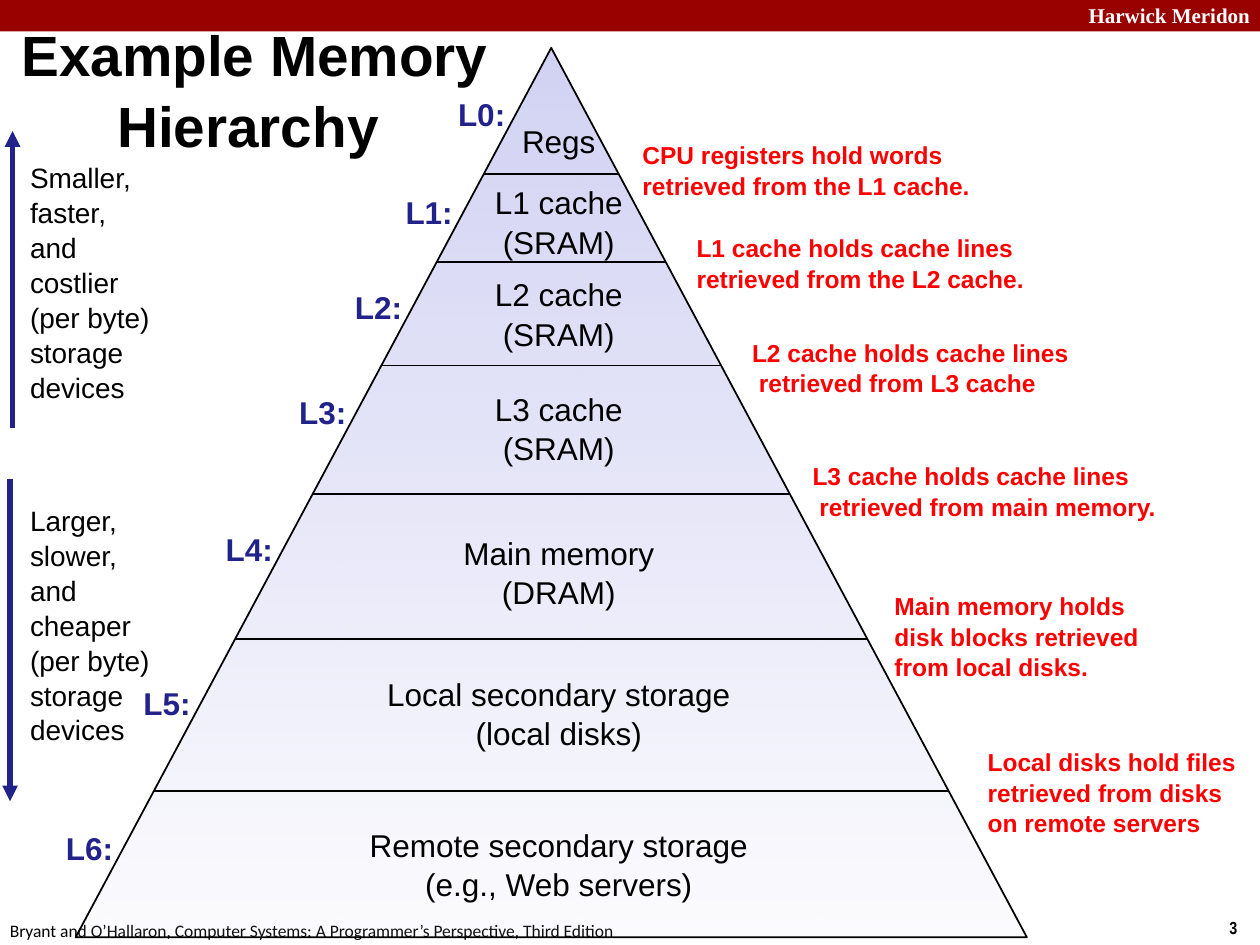
from lxml.etree import SubElement
from pptx import Presentation
from pptx.dml.color import RGBColor
from pptx.enum.shapes import MSO_CONNECTOR as CONN, MSO_SHAPE as SHAPE
from pptx.enum.text import MSO_ANCHOR as ANCHOR, MSO_AUTO_SIZE as AUTO, PP_ALIGN as ALIGN
from pptx.oxml.ns import qn
from pptx.util import Pt

PX = 9144  # EMU per px, 100 px to the inch
BLACK, WHITE, RED, NAVY = "000000", "FFFFFF", "FF0000", "22228B"
BANNER, LAVENDER = "990000", "D2D2F4"
LEADING = 1.04

# name lines, top of name, middle of label, bottom of level
LEVELS = [
    (["Regs"], 91, 90, 138),
    (["L1 cache", "(SRAM)"], 140, 168, 208),
    (["L2 cache", "(SRAM)"], 213, 243, 290),
    (["L3 cache", "(SRAM)"], 304, 326, 392),
    (["Main memory", "(DRAM)"], 418, 435, 507),
    (["Local secondary storage", "(local disks)"], 530, 557, 628),
    (["Remote secondary storage", "(e.g., Web servers)"], 650, 672, 744),
]
NOTES = [
    ((500, 106, 319, 57), ["CPU registers hold words retrieved from the L1 cache."]),
    ((543, 180, 310, 57), ["L1 cache holds cache lines retrieved from the L2 cache."]),
    ((587, 263, 288, 57), ["L2 cache holds cache lines", " retrieved from L3 cache"]),
    ((635, 361, 315, 57), ["L3 cache holds cache lines", " retrieved from main memory."]),
    ((700, 464, 239, 81), ["Main memory holds disk blocks retrieved from local disks."]),
    ((774, 588, 226, 81), ["Local disks hold files retrieved from disks", "on remote servers"]),
]
SMALLER = ["Smaller,", "faster,", "and", "costlier", "(per byte)", "storage", "devices"]
LARGER = ["Larger,", "slower,", "and", "cheaper", "(per byte)", "storage", "devices"]


def rgb(value):
    return RGBColor.from_string(value)


def emu(*lengths):
    return [round(n * PX) for n in lengths]


def write(tf, lines, size, color=BLACK, bold=False, font="Arial", align=ALIGN.LEFT):
    """Fill a text frame with one paragraph for each line."""
    for i, line in enumerate(lines):
        p = tf.add_paragraph() if i else tf.paragraphs[0]
        p.alignment = align
        p.space_before = Pt(0)
        if font == "Arial":
            p.line_spacing = LEADING
        r = p.add_run()
        r.text = line
        r.font.name, r.font.size, r.font.bold = font, Pt(size), bold
        r.font.color.rgb = rgb(color)


def add_text(slide, box, lines, size, wrap=True, anchor=ANCHOR.MIDDLE, **style):
    tf = slide.shapes.add_textbox(*emu(*box)).text_frame
    tf.word_wrap = wrap
    tf.vertical_anchor = anchor
    write(tf, lines, size, **style)


def add_line(slide, start, end, color=BLACK, width=1, arrow=False):
    line = slide.shapes.add_connector(CONN.STRAIGHT, *emu(*start, *end))
    line.line.color.rgb = rgb(color)
    line.line.width = Pt(width)
    if arrow:
        SubElement(line.line._get_or_add_ln(), qn("a:tailEnd"), type="triangle")
    SubElement(line._element.spPr, qn("a:effectLst"))


def add_frame(slide, width):
    """Banner, page number and source line."""
    banner = slide.shapes.add_shape(SHAPE.RECTANGLE, *emu(0, 0, width, 25))
    banner.shadow.inherit = False
    banner.fill.solid()
    banner.fill.fore_color.rgb = rgb(BANNER)
    banner.line.fill.background()
    add_text(slide, (width - 200, -3, 202, 30), ["Harwick Meridon"], 12, color=WHITE,
             bold=True, font="Times New Roman", align=ALIGN.RIGHT)
    add_text(slide, (width - 34, 723, 34, 27), ["3"], 10, wrap=False,
             bold=True, font="Arial Narrow", anchor=ANCHOR.TOP)
    add_text(slide, (-2, 725, 508, 27),
             ["Bryant and O’Hallaron, Computer Systems: A Programmer’s Perspective, Third Edition"],
             10, wrap=False, font="Calibri", anchor=ANCHOR.TOP)


def add_title(slide, box):
    title = slide.shapes.title
    title.left, title.top, title.width, title.height = emu(*box)
    tf = title.text_frame
    tf.auto_size = AUTO.NONE
    tf.vertical_anchor = ANCHOR.MIDDLE
    write(tf, ["Example Memory", "Hierarchy"], 32.4, bold=True)
    tf.paragraphs[1]._p.get_or_add_pPr().set("marL", str(76 * PX))


def add_pyramid(slide, box):
    left, top, width, height = box
    middle = left + width / 2
    sp = slide.shapes.add_shape(SHAPE.ISOSCELES_TRIANGLE, *emu(*box))
    sp.shadow.inherit = False
    sp.fill.gradient()
    sp.fill.gradient_angle = 90
    for stop in sp.fill.gradient_stops:
        stop.color.rgb = rgb(LAVENDER)
    base_color = next(sp._element.spPr.iter(qn("a:srgbClr")))
    SubElement(base_color, qn("a:alpha"), val="7000")
    sp.line.color.rgb = rgb(BLACK)
    sp.line.width = Pt(1)

    def half_width(y):
        return (y - top) / height * width / 2

    for i, (name, name_y, label_y, bottom) in enumerate(LEVELS):
        name_height = 9 + 31 * len(name)
        add_text(slide, (middle - 194, name_y, 400, name_height), name, 18, align=ALIGN.CENTER)
        label_x = middle - half_width(label_y) - 56
        add_text(slide, (label_x, label_y - 20, 58, 40), [f"L{i}:"], 18,
                 wrap=False, color=NAVY, bold=True)
        if i < len(LEVELS) - 1:
            half = half_width(bottom)
            add_line(slide, (middle - half, bottom), (middle + half, bottom))


def add_trend(slide, box, lines, arrow_x, start_y, end_y):
    """Side remark with the arrow along it."""
    add_text(slide, box, lines, 16, wrap=False)
    add_line(slide, (arrow_x, start_y), (arrow_x, end_y), NAVY, 3, arrow=True)


def main():
    prs = Presentation()
    prs.slide_width, prs.slide_height = emu(1000, 750)
    slide = prs.slides.add_slide(prs.slide_layouts[5])
    add_frame(slide, 1000)
    add_title(slide, (7, 27, 953, 86))
    add_pyramid(slide, (60, 38, 755, 706))
    for box, lines in NOTES:
        add_text(slide, box, lines, 14, color=RED, bold=True)
    add_trend(slide, (14, 124, 116, 199), SMALLER, 10, 340, 104)
    add_trend(slide, (14, 396, 116, 199), LARGER, 8, 380, 636)
    prs.save("out.pptx")


if __name__ == "__main__":
    main()
